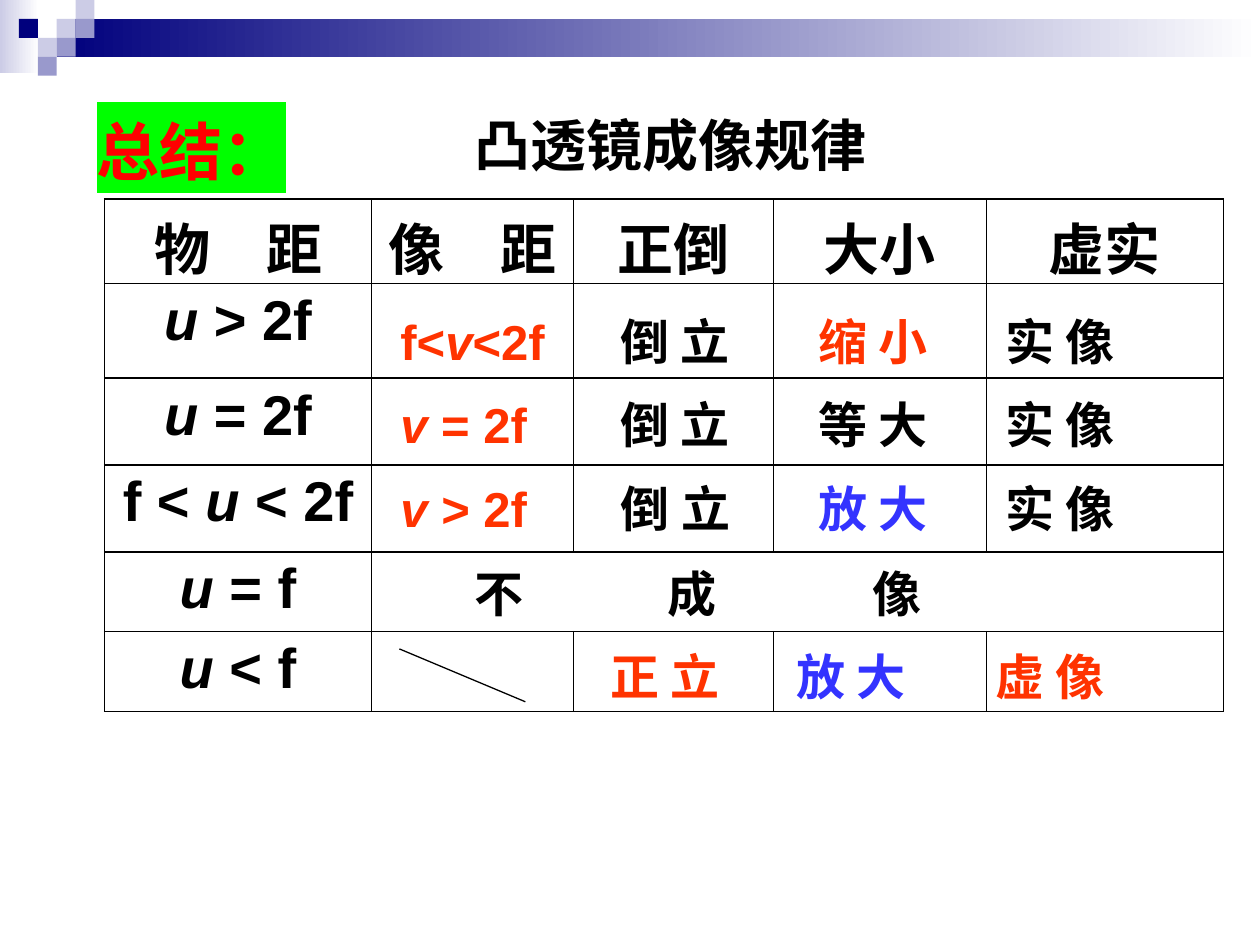
from lxml import etree
from pptx import Presentation
from pptx.dml.color import RGBColor
from pptx.enum.shapes import MSO_CONNECTOR, MSO_SHAPE
from pptx.enum.text import MSO_ANCHOR, PP_ALIGN
from pptx.oxml.ns import qn
from pptx.util import Inches, Pt

RECT = MSO_SHAPE.RECTANGLE
STRAIGHT = MSO_CONNECTOR.STRAIGHT
MIDDLE = MSO_ANCHOR.MIDDLE
CENTER = PP_ALIGN.CENTER
FONT = "Arial"
COLORS = {
    "black": "000000", "white": "FFFFFF", "navy": "00007D",
    "pale": "CCCCE6", "lilac": "9999CC", "red": "FF0000",
    "orange": "FF3300", "blue": "3333FF", "green": "00FF00",
}

COLUMN_WIDTHS = [2.12, 1.6, 1.59, 1.69, 1.88]
ROW_HEIGHTS = [0.67, 0.75, 0.69, 0.69, 0.63, 0.63]
HEADINGS = ["物　距", "像　距", "正倒", "大小", "虚实"]
# Text before, the italic variable, text after
OBJECT_DISTANCES = [("", "u", " > 2f"), ("", "u", " = 2f"),
                    ("f < ", "u", " < 2f"), ("", "u", " = f"), ("", "u", " < f")]
# Left, top, width, tab stops, spans (text, colour, italic)
IMAGE_STOPS = [1.75, 3.32, 4.8]
RESULTS = [
    (2.25, 0.84, 6.67, IMAGE_STOPS,
     [("f<", "orange", False), ("v", "orange", True), ("<2f", "orange", False),
      ("\t倒 立", "black", False), ("\t缩 小", "orange", False),
      ("\t实 像", "black", False)]),
    (2.25, 1.5, 6.5, IMAGE_STOPS,
     [("v", "orange", True), (" = 2f", "orange", False),
      ("\t倒 立\t等 大\t实 像", "black", False)]),
    (2.25, 2.17, 6.42, IMAGE_STOPS,
     [("v", "orange", True), (" > 2f", "orange", False),
      ("\t倒 立", "black", False), ("\t放 大", "blue", False),
      ("\t实 像", "black", False)]),
    (2.84, 2.84, 5.44, [1.53, 3.16], [("不\t成\t像", "black", False)]),
    (3.92, 3.5, 4.97, [1.47, 3.05],
     [("正 立", "orange", False), ("\t放 大", "blue", False),
      ("\t虚 像", "orange", False)]),
]


def rgb(name):
    return RGBColor.from_string(COLORS[name])


def add_span(para, text, size, color="black", italic=False):
    span = para.add_run()
    span.text = text
    font = span.font
    font.size, font.name, font.bold, font.italic = Pt(size), FONT, True, italic
    font.color.rgb = rgb(color)
    return span


def add_text_box(page, left, top, width, height):
    box = page.shapes.add_textbox(Inches(left), Inches(top), Inches(width), Inches(height))
    box.text_frame.word_wrap = True
    return box.text_frame


def add_block(page, left, top, width, height, color, fade_to=None):
    block = page.shapes.add_shape(RECT, Inches(left), Inches(top),
                                  Inches(width), Inches(height))
    block.shadow.inherit = False
    block.line.fill.background()
    if fade_to:
        block.fill.gradient()
        block.fill.gradient_angle = 0
        for stop, name in zip(block.fill.gradient_stops, (color, fade_to)):
            stop.color.rgb = rgb(name)
    else:
        block.fill.solid()
        block.fill.fore_color.rgb = rgb(color)


def add_banner(page, left, top, width):
    side = 0.15
    add_block(page, left, top, 0.31, 0.58, "pale", "white")
    add_block(page, left + 3 * side, top + side, width - 3 * side, 2 * side, "navy", "white")
    # Mosaic squares by grid column and row
    for column, row, color in [(3, 1, "pale"), (4, 0, "pale"), (4, 1, "lilac"),
                               (2, 2, "pale"), (1, 1, "navy"), (3, 2, "lilac"),
                               (2, 3, "lilac")]:
        add_block(page, left + column * side, top + row * side, side, side, color)


def add_headings(page, left, top):
    # Highlighted summary label
    frame = add_text_box(page, left, top + 0.01, 2.17, 0.7)
    frame.vertical_anchor = MIDDLE
    span = add_span(frame.paragraphs[0], "总结：", 36, "red")
    highlight = etree.Element(qn("a:highlight"))
    etree.SubElement(highlight, qn("a:srgbClr"), val=COLORS["green"])
    span.font._element.find(qn("a:solidFill")).addnext(highlight)
    # Table title
    frame = add_text_box(page, left + 3, top, 4.25, 0.63)
    add_span(frame.paragraphs[0], "凸透镜成像规律", 32)


def style_cell(cell):
    cell.fill.background()
    properties = cell._tc.get_or_add_tcPr()
    for index, side in enumerate(("lnL", "lnR", "lnT", "lnB")):
        border = etree.Element(qn("a:" + side), w=str(Pt(1)))
        fill = etree.SubElement(border, qn("a:solidFill"))
        etree.SubElement(fill, qn("a:srgbClr"), val=COLORS["black"])
        properties.insert(index, border)


def add_rules_table(page, left, top):
    table = page.shapes.add_table(
        len(ROW_HEIGHTS), len(COLUMN_WIDTHS), Inches(left), Inches(top),
        Inches(sum(COLUMN_WIDTHS)), Inches(sum(ROW_HEIGHTS))).table
    table.first_row = table.horz_banding = False
    for column, width in zip(table.columns, COLUMN_WIDTHS):
        column.width = Inches(width)
    for row, height in zip(table.rows, ROW_HEIGHTS):
        row.height = Inches(height)
    for cell in table.iter_cells():
        style_cell(cell)
    table.cell(4, 1).merge(table.cell(4, 4))

    for index, heading in enumerate(HEADINGS):
        para = table.cell(0, index).text_frame.paragraphs[0]
        para.alignment = CENTER
        add_span(para, heading, 32)
    for index, (before, variable, after) in enumerate(OBJECT_DISTANCES, 1):
        para = table.cell(index, 0).text_frame.paragraphs[0]
        para.alignment = CENTER
        if before:
            add_span(para, before, 32)
        add_span(para, variable, 32, italic=True)
        add_span(para, after, 32)


def add_results(page, left, top):
    # Slash through the cell that has no image distance
    slash = page.shapes.add_connector(
        STRAIGHT, Inches(left + 2.34), Inches(top + 3.57),
        Inches(left + 3.34), Inches(top + 3.99))
    slash.line.color.rgb = rgb("black")
    slash.line.width = Pt(0.75)
    etree.SubElement(slash._element.spPr, qn("a:effectLst"))
    # Result lines laid over the table rows
    for x, y, width, stops, spans in RESULTS:
        para = add_text_box(page, left + x, top + y, width, 0.57).paragraphs[0]
        tabs = etree.SubElement(para._p.get_or_add_pPr(), qn("a:tabLst"))
        for stop in stops:
            etree.SubElement(tabs, qn("a:tab"), pos=str(Inches(stop)), algn="l")
        for text, color, italic in spans:
            add_span(para, text, 28, color, italic)


def main():
    deck = Presentation()
    deck.slide_width, deck.slide_height = Inches(10), Inches(7.5)
    page = deck.slides.add_slide(deck.slide_layouts[6])
    add_banner(page, 0, 0, 10)
    add_headings(page, 0.67, 0.83)
    add_rules_table(page, 0.83, 1.58)
    add_results(page, 0.83, 1.58)
    deck.save("out.pptx")


if __name__ == "__main__":
    main()
